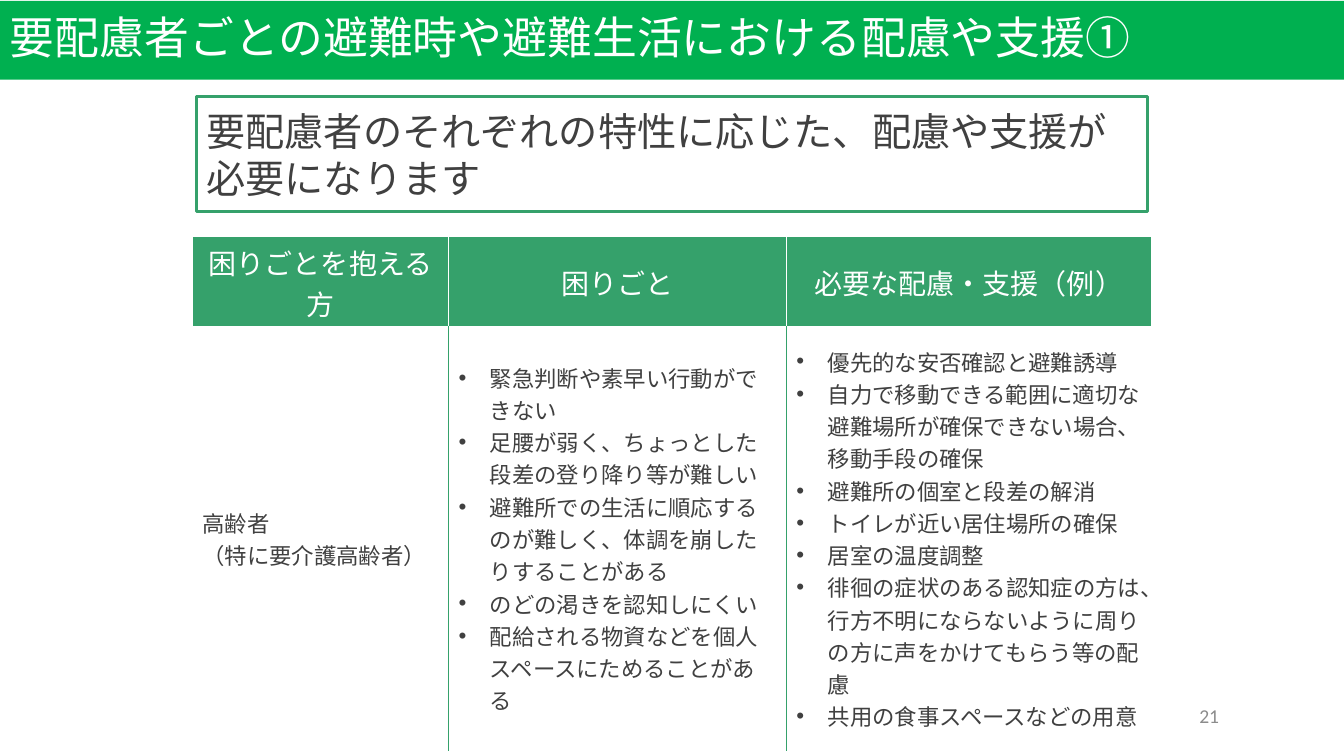
from dataclasses import dataclass

from lxml.etree import SubElement
from pptx import Presentation
from pptx.dml.color import RGBColor
from pptx.enum.shapes import MSO_SHAPE as Shape
from pptx.enum.text import MSO_ANCHOR as Anchor, PP_ALIGN as Align
from pptx.oxml.ns import qn
from pptx.util import Pt

EMU_PER_PX = 9144
WHITE = RGBColor(0xFF, 0xFF, 0xFF)
BRIGHT_GREEN = RGBColor(0x00, 0xB0, 0x50)
GREEN = RGBColor(0x35, 0xA1, 0x6B)
DARK = RGBColor(0x40, 0x40, 0x40)
GRAY = RGBColor(0x8C, 0x8C, 0x8C)
JAPANESE = "Noto Sans CJK JP"
LATIN = "Calibri"
BULLET_INDENT = 31
ROW_HEIGHTS = (90, 419)


@dataclass(frozen=True)
class TextStyle:
    size: int
    color: RGBColor
    font: str = JAPANESE
    align: Align = Align.LEFT
    line_spacing: float = 1.0
    bulleted: bool = False


@dataclass(frozen=True)
class Panel:
    left: int
    top: int
    width: int
    height: int
    text: str
    style: TextStyle
    fill: RGBColor
    outline: RGBColor | None = None


@dataclass(frozen=True)
class Column:
    width: int
    heading: str
    items: tuple[str, ...]
    bulleted: bool = True


PANELS = (
    Panel(0, 1, 1333, 78, "要配慮者ごとの避難時や避難生活における配慮や支援①",
          TextStyle(32, WHITE, line_spacing=0.9), BRIGHT_GREEN),
    Panel(195, 96, 943, 114, "要配慮者のそれぞれの特性に応じた、配慮や支援が必要になります",
          TextStyle(28, DARK), WHITE, GREEN),
)

COLUMNS = (
    Column(254, "困りごとを抱える方", ("高齢者", "（特に要介護高齢者）"), bulleted=False),
    Column(335, "困りごと", (
        "緊急判断や素早い行動ができない",
        "足腰が弱く、ちょっとした段差の登り降り等が難しい",
        "避難所での生活に順応するのが難しく、体調を崩したりすることがある",
        "のどの渇きを認知しにくい",
        "配給される物資などを個人スペースにためることがある",
    )),
    Column(362, "必要な配慮・支援（例）", (
        "優先的な安否確認と避難誘導",
        "自力で移動できる範囲に適切な避難場所が確保できない場合、移動手段の確保",
        "避難所の個室と段差の解消",
        "トイレが近い居住場所の確保",
        "居室の温度調整",
        "徘徊の症状のある認知症の方は、行方不明にならないように周りの方に声をかけてもらう等の配慮",
        "共用の食事スペースなどの用意",
    )),
)


def px(length: int) -> int:
    return length * EMU_PER_PX


def add_bullet(para) -> None:
    properties = para._p.get_or_add_pPr()
    properties.set("marL", str(px(BULLET_INDENT)))
    properties.set("indent", str(-px(BULLET_INDENT)))
    SubElement(properties, qn("a:buFont"), typeface="Arial")
    SubElement(properties, qn("a:buChar"), char="•")


def write(frame, lines: tuple[str, ...], style: TextStyle) -> None:
    frame.word_wrap = True
    for index, line in enumerate(lines):
        para = frame.add_paragraph() if index else frame.paragraphs[0]
        para.alignment = style.align
        para.line_spacing = style.line_spacing
        if style.bulleted:
            add_bullet(para)
        span = para.add_run()
        span.text = line
        span.font.size = Pt(style.size)
        span.font.bold = False
        span.font.color.rgb = style.color
        span.font.name = style.font
        SubElement(span.font._element, qn("a:ea"), typeface=style.font)


def add_panel(page, panel: Panel) -> None:
    box = page.shapes.add_shape(Shape.RECTANGLE, px(panel.left), px(panel.top),
                                px(panel.width), px(panel.height))
    box.shadow.inherit = False
    box.fill.solid()
    box.fill.fore_color.rgb = panel.fill
    if panel.outline is None:
        box.line.fill.background()
    else:
        box.line.color.rgb = panel.outline
        box.line.width = Pt(2.25)
    box.text_frame.vertical_anchor = Anchor.MIDDLE
    write(box.text_frame, (panel.text,), panel.style)


def add_page_number(page, number: str) -> None:
    box = page.shapes.add_textbox(px(994), px(690), px(225), px(40))
    box.text_frame.vertical_anchor = Anchor.MIDDLE
    write(box.text_frame, (number,), TextStyle(14, GRAY, LATIN, Align.RIGHT))


def set_border(cell, side: str, color: RGBColor, width: int) -> None:
    line = SubElement(cell._tc.get_or_add_tcPr(), qn(f"a:ln{side}"), w=str(Pt(width)))
    fill = SubElement(line, qn("a:solidFill"))
    SubElement(fill, qn("a:srgbClr"), val=str(color))


def fill_cell(cell, lines: tuple[str, ...], style: TextStyle, fill: RGBColor,
              left: RGBColor, right: RGBColor, bottom_width: int) -> None:
    set_border(cell, "L", left, 1)
    set_border(cell, "R", right, 1)
    set_border(cell, "T", WHITE, 1)
    set_border(cell, "B", WHITE, bottom_width)
    cell.fill.solid()
    cell.fill.fore_color.rgb = fill
    cell.vertical_anchor = Anchor.MIDDLE
    write(cell.text_frame, lines, style)


def add_support_table(page) -> None:
    width = sum(column.width for column in COLUMNS)
    table = page.shapes.add_table(len(ROW_HEIGHTS), len(COLUMNS), px(191), px(235),
                                  px(width), px(sum(ROW_HEIGHTS))).table
    table.first_row = False
    table.horz_banding = False
    for row, height in zip(table.rows, ROW_HEIGHTS):
        row.height = px(height)
    heading_style = TextStyle(20, WHITE, align=Align.CENTER)
    last = len(COLUMNS) - 1
    for index, column in enumerate(COLUMNS):
        table.columns[index].width = px(column.width)
        fill_cell(table.cell(0, index), (column.heading,), heading_style,
                  GREEN, WHITE, WHITE, 3)
        fill_cell(table.cell(1, index), column.items,
                  TextStyle(16, DARK, bulleted=column.bulleted), WHITE,
                  GREEN if index > 0 else WHITE, GREEN if index < last else WHITE, 1)


def main() -> None:
    deck = Presentation()
    deck.slide_width = px(1333)
    deck.slide_height = px(750)
    page = deck.slides.add_slide(deck.slide_layouts[6])
    title, message = PANELS
    add_panel(page, title)
    add_page_number(page, "21")
    add_support_table(page)
    add_panel(page, message)
    deck.save("out.pptx")


if __name__ == "__main__":
    main()
